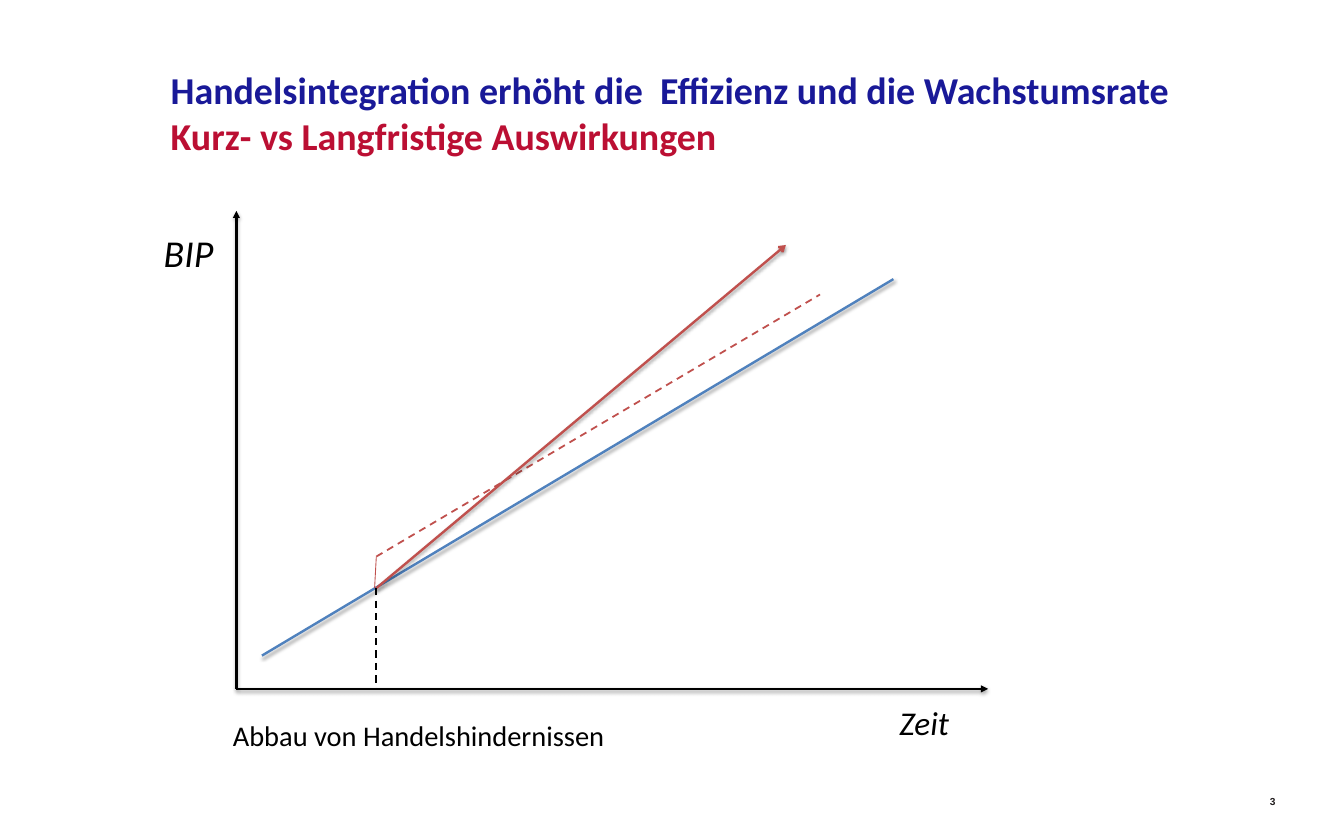
from lxml import etree
from pptx import Presentation
from pptx.dml.color import RGBColor
from pptx.enum import dml, shapes, text
from pptx.oxml import ns, parse_xml
from pptx.util import Pt

PX = 9144  # 100 px to the inch
BLACK = RGBColor(0, 0, 0)
NAVY = RGBColor(0x19, 0x19, 0x98)
CRIMSON = RGBColor(0xBB, 0x0F, 0x33)
BLUE = RGBColor(0x4F, 0x81, 0xBD)
RED = RGBColor(0xC0, 0x50, 0x4D)
GREY = RGBColor(0x23, 0x1F, 0x20)

SHADOW = (
    f'<a:effectLst {ns.nsdecls("a")}>'
    '<a:outerShdw blurRad="39370" dist="20320" dir="5400000" rotWithShape="0">'
    '<a:srgbClr val="000000"><a:alpha val="38000"/></a:srgbClr>'
    '</a:outerShdw></a:effectLst>'
)


def px(*lengths):
    return [n * PX for n in lengths]


def set_font(font, size, color, name="Calibri", bold=False, italic=False):
    font.name, font.size, font.color.rgb = name, Pt(size), color
    font.bold, font.italic = bold, italic


def add_label(s, box, label, size, color=BLACK, **style):
    tf = s.shapes.add_textbox(*px(*box)).text_frame
    tf.word_wrap = False
    p = tf.paragraphs[0]
    p.text = label
    set_font(p.font, size, color, **style)
    return tf


def add_line(s, start, end, color, width, dash=False, head=None, shadow=False):
    line = s.shapes.add_connector(
        shapes.MSO_CONNECTOR.STRAIGHT, *px(*start, *end))
    line.line.color.rgb = color
    line.line.width = Pt(width)
    if dash:
        line.line.dash_style = dml.MSO_LINE.DASH
    props = line._element.spPr
    if head:
        etree.SubElement(props.find(ns.qn("a:ln")), ns.qn("a:tailEnd"), type=head)
    if shadow:
        props.append(parse_xml(SHADOW))
    else:
        etree.SubElement(props, ns.qn("a:effectLst"))


def add_title(s, box):
    sp = s.shapes.title
    sp.left, sp.top, sp.width, sp.height = px(*box)
    tf = sp.text_frame
    tf.auto_size = text.MSO_AUTO_SIZE.NONE
    tf.vertical_anchor = text.MSO_ANCHOR.TOP
    tf.text = ("Handelsintegration erhöht die  Effizienz und die Wachstumsrate\n"
               "Kurz- vs Langfristige Auswirkungen")
    for p, color in zip(tf.paragraphs, (NAVY, CRIMSON)):
        p.alignment = text.PP_ALIGN.LEFT
        set_font(p.font, 32, color, bold=True)


def add_growth_diagram(s, box):
    left, top, width, height = box
    bottom = top + height

    def at(time, gdp):
        return left + time, bottom - gdp

    # Axes
    for tip in (at(width, 0), at(0, height)):
        add_line(s, at(0, 0), tip, BLACK, 2, head="triangle", shadow=True)

    # Growth paths
    opening, level_start = at(164, 118), at(164, 155)
    add_line(s, at(30, 39), at(770, 480), BLUE, 2, shadow=True)
    add_line(s, level_start, at(162, 118), RED, 0.75)
    add_line(s, level_start, at(684, 462), RED, 1.5, dash=True)
    add_line(s, opening, at(644, 520), RED, 2, head="arrow", shadow=True)
    add_line(s, opening, at(164, 0), BLACK, 1.5, dash=True)

    # Labels
    add_label(s, (left + 767, bottom + 11, 79, 57), "Zeit", 28, italic=True)
    add_label(s, (left - 95, top + 17, 79, 98), "BIP", 32, italic=True)
    add_label(s, (left - 14, bottom + 29, 468, 50),
              "Abbau von Handelshindernissen", 24)


def add_page_number(s, box):
    tf = add_label(s, box, "3", 8.6, GREY, name="Arial", bold=True)
    tf.margin_left = 4 * PX
    tf.margin_top = tf.margin_right = tf.margin_bottom = 0


def main():
    prs = Presentation()
    prs.slide_width, prs.slide_height = px(1575, 984)
    s = prs.slides.add_slide(prs.slide_layouts[5])
    add_title(s, (190, 73, 1307, 118))
    add_growth_diagram(s, (277, 247, 881, 560))
    add_page_number(s, (1484, 932, 28, 14))
    prs.save("out.pptx")


if __name__ == "__main__":
    main()
